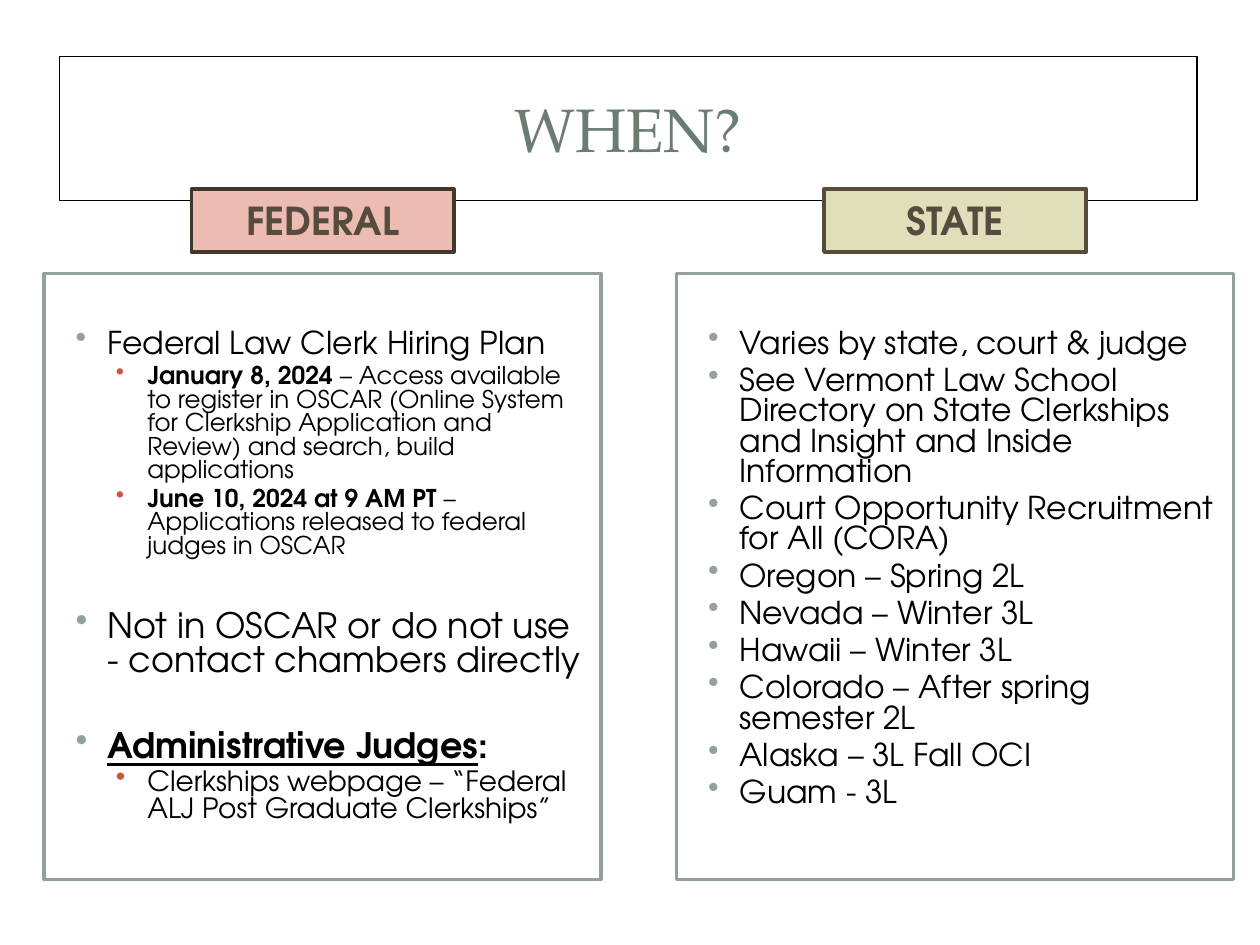
from dataclasses import dataclass

import pptx
import pptx.dml.color
import pptx.enum.shapes
import pptx.enum.text
import pptx.oxml.ns
import pptx.util
from lxml import etree

Inches = pptx.util.Inches
Pt = pptx.util.Pt
RGBColor = pptx.dml.color.RGBColor
Align = pptx.enum.text.PP_ALIGN
Anchor = pptx.enum.text.MSO_ANCHOR

BLACK = RGBColor(0x00, 0x00, 0x00)
WHITE = RGBColor(0xFF, 0xFF, 0xFF)
SAGE = RGBColor(0x93, 0xA2, 0x99)
DARK_SAGE = RGBColor(0x6B, 0x7D, 0x72)
RED = RGBColor(0xCF, 0x54, 0x3F)
PINK = RGBColor(0xEC, 0xBB, 0xB2)
KHAKI = RGBColor(0xE1, 0xDF, 0xBA)
BROWN = RGBColor(0x56, 0x4B, 0x3C)
DARK_BROWN = RGBColor(0x41, 0x38, 0x2D)

HEADING_FONT = "TeX Gyre Pagella"
BODY_FONT = "TeX Gyre Adventor"
COLUMN_LEFT = 0.35
COLUMN_STEP = 5.02
BULLET_HANG = 0.25
INDENTS = (0.38, 0.7)
BULLET_COLORS = (SAGE, RED)
SPACES_BEFORE = (4, 3)
SECTION_GAP = 30


@dataclass
class Span:
    text: str
    bold: bool = False
    underline: bool = False


@dataclass
class Bullet:
    spans: list[Span]
    size: float = 18
    level: int = 0
    starts_section: bool = False


@dataclass
class Column:
    heading: str
    fill: RGBColor
    border: RGBColor
    bullets: list[Bullet]


COLUMNS = [
    Column("FEDERAL", PINK, DARK_BROWN, [
        Bullet([Span("Federal Law Clerk Hiring Plan")]),
        Bullet([Span("January 8, 2024 ", bold=True),
                Span("– Access available to register in OSCAR (Online System for "
                     "Clerkship Application and Review) and search, build applications")],
               size=14, level=1),
        Bullet([Span("June 10, 2024 at 9 AM PT ", bold=True),
                Span("– Applications released to federal judges in OSCAR")],
               size=14, level=1),
        Bullet([Span("Not in OSCAR or do not use - contact chambers directly")],
               size=20, starts_section=True),
        Bullet([Span("Administrative Judges", bold=True, underline=True),
                Span(":", bold=True)], size=20, starts_section=True),
        Bullet([Span("Clerkships webpage – “Federal ALJ Post Graduate Clerkships”")],
               size=16, level=1),
    ]),
    Column("STATE", KHAKI, BROWN, [Bullet([Span(text)]) for text in (
        "Varies by state, court & judge",
        "See Vermont Law School Directory on State Clerkships and Insight and "
        "Inside Information",
        "Court Opportunity Recruitment for All (CORA)",
        "Oregon – Spring 2L",
        "Nevada – Winter 3L",
        "Hawaii – Winter 3L",
        "Colorado – After spring semester 2L",
        "Alaska – 3L Fall OCI",
        "Guam - 3L",
    )]),
]


def set_values(target, values: dict) -> None:
    for name, value in values.items():
        setattr(target, name, value)


def add_box(page, left: float, top: float, width: float, height: float,
            border: RGBColor, weight: float, fill: RGBColor, frame_values: dict):
    box = page.shapes.add_shape(
        pptx.enum.shapes.MSO_SHAPE.RECTANGLE,
        Inches(left), Inches(top), Inches(width), Inches(height))
    box.shadow.inherit = False
    box.fill.solid()
    box.fill.fore_color.rgb = fill
    box.line.color.rgb = border
    box.line.width = Pt(weight)
    set_values(box.text_frame, {"word_wrap": True, **frame_values})
    return box


def add_span(para, span: Span, size: float, color: RGBColor, font: str) -> None:
    run = para.add_run()
    run.text = span.text
    set_values(run.font, {"name": font, "size": Pt(size), "bold": span.bold,
                          "underline": span.underline})
    run.font.color.rgb = color


def add_heading(box, span: Span, size: float, color: RGBColor, font: str) -> None:
    para = box.text_frame.paragraphs[0]
    para.alignment = Align.CENTER
    add_span(para, span, size, color, font)


def set_bullet(para, level: int) -> None:
    qn = pptx.oxml.ns.qn
    properties = para._p.get_or_add_pPr()
    properties.set("marL", str(Inches(INDENTS[level])))
    properties.set("indent", str(-Inches(BULLET_HANG)))
    color = etree.SubElement(properties, qn("a:buClr"))
    etree.SubElement(color, qn("a:srgbClr"), val=str(BULLET_COLORS[level]))
    etree.SubElement(properties, qn("a:buChar"), char="•")


def add_bullets(box, bullets: list[Bullet]) -> None:
    frame = box.text_frame
    for index, bullet in enumerate(bullets):
        para = frame.add_paragraph() if index else frame.paragraphs[0]
        set_bullet(para, bullet.level)
        space = SECTION_GAP if bullet.starts_section else SPACES_BEFORE[bullet.level]
        set_values(para, {"alignment": Align.LEFT, "level": bullet.level,
                          "line_spacing": 0.8,
                          "space_before": Pt(space if index else 0)})
        for span in bullet.spans:
            add_span(para, span, bullet.size, BLACK, BODY_FONT)


def add_column(page, column: Column, left: float) -> None:
    # Panel with the bullet list
    panel = add_box(page, left, 2.17, 4.42, 4.81, SAGE, 2, WHITE, {
        "vertical_anchor": Anchor.TOP, "margin_left": Inches(0.12),
        "margin_right": Inches(0.11), "margin_top": Inches(0.45),
        "margin_bottom": Inches(0.05)})
    add_bullets(panel, column.bullets)

    # Heading tab above the panel
    tab = add_box(page, left + 1.17, 1.5, 2.08, 0.5, column.border, 2.25, column.fill, {
        "vertical_anchor": Anchor.BOTTOM, "margin_top": Inches(0.05),
        "margin_bottom": Inches(0.07)})
    add_heading(tab, Span(column.heading, bold=True), 22, BROWN, BODY_FONT)


def main() -> None:
    deck = pptx.Presentation()
    set_values(deck, {"slide_width": Inches(10), "slide_height": Inches(7.5)})
    page = deck.slides.add_slide(deck.slide_layouts[6])

    # Title frame
    title = add_box(page, 0.47, 0.45, 9.03, 1.14, BLACK, 0.75, WHITE,
                    {"vertical_anchor": Anchor.MIDDLE})
    add_heading(title, Span("WHEN?"), 35, DARK_SAGE, HEADING_FONT)

    # Federal and state columns
    for index, column in enumerate(COLUMNS):
        add_column(page, column, COLUMN_LEFT + index * COLUMN_STEP)

    deck.save("out.pptx")


if __name__ == "__main__":
    main()
